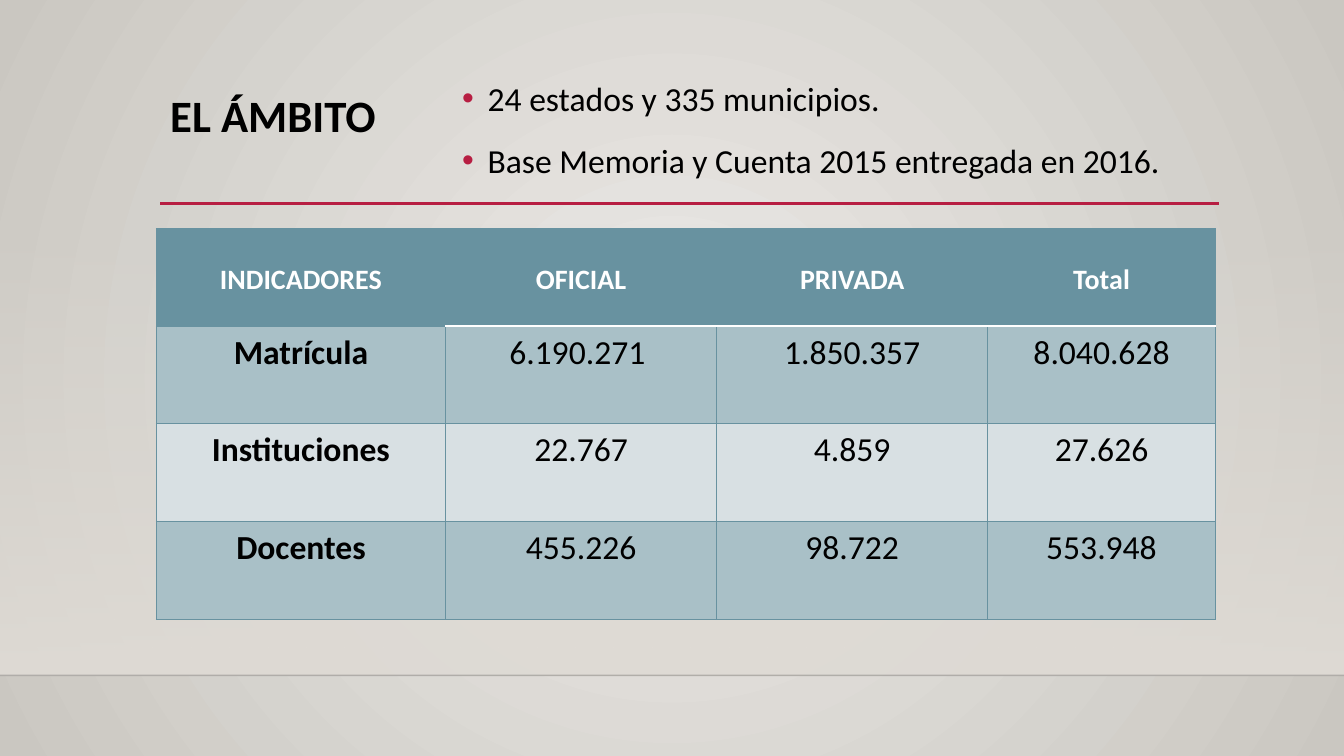
from pptx import Presentation
from pptx.dml.color import RGBColor as RGB
from pptx.enum.shapes import MSO_CONNECTOR, MSO_SHAPE
from pptx.enum.text import MSO_ANCHOR, PP_ALIGN
from pptx.oxml import parse_xml
from pptx.oxml.ns import nsdecls, qn
from pptx.util import Cm, Pt
from lxml import etree

COLORS = {
    "black": "000000", "white": "FFFFFF", "red": "B71E42", "teal": "6892A0",
    "band_dark": "A9C0C7", "band_light": "D8E0E3",
    "center": "ECEAE7", "edge": "CAC7C1", "wall": "DFDBD5", "floor_line": "000001",
}


def set_gradient(parent, stops, direction):
    gs = "".join(
        f'<a:gs pos="{pos}"><a:srgbClr val="{COLORS[name]}"><a:alpha val="{alpha}"/></a:srgbClr></a:gs>'
        for pos, name, alpha in stops)
    old = parent.find(".//" + qn("a:gradFill"))
    new = parse_xml(f'<a:gradFill {nsdecls("a")} rotWithShape="1"><a:gsLst>{gs}</a:gsLst>{direction}</a:gradFill>')
    old.getparent().replace(old, new)


def style_paragraph(p, size, color, bold, spacing):
    p.line_spacing = spacing
    for r in p.runs:
        r.font.name = "Calibri"
        r.font.size = Pt(size)
        r.font.bold = bold
        r.font.color.rgb = RGB.from_string(COLORS[color])


prs = Presentation()
prs.slide_width, prs.slide_height = Cm(33.87), Cm(19.05)
s = prs.slides.add_slide(prs.slide_layouts[6])

s.background.fill.gradient()
set_gradient(s._element, [(0, "center", 100000), (100000, "edge", 100000)],
             '<a:path path="circle"><a:fillToRect l="50000" t="50000" r="50000" b="50000"/></a:path>')

wall = s.shapes.add_shape(MSO_SHAPE.RECTANGLE, 0, Cm(5.61), prs.slide_width, Cm(11.41))
wall.shadow.inherit = False
wall.line.fill.background()
wall.fill.gradient()
set_gradient(wall._element, [(0, "wall", 0), (100000, "wall", 100000)], '<a:lin ang="5400000" scaled="0"/>')

for x1, x2, y, color, width, alpha in [
    (0, 33.87, 17.02, "floor_line", 1, 20000),
    (4.04, 30.73, 5.13, "red", 2.5, 100000),
]:
    line = s.shapes.add_connector(MSO_CONNECTOR.STRAIGHT, Cm(x1), Cm(y), Cm(x2), Cm(y))
    line.line.color.rgb = RGB.from_string(COLORS[color])
    line.line.width = Pt(width)
    etree.SubElement(line._element.find(".//" + qn("a:srgbClr")), qn("a:alpha"), val=str(alpha))
    etree.SubElement(line._element.spPr, qn("a:effectLst"))

title = s.shapes.add_textbox(Cm(4.04), Cm(2.24), Cm(26.67), Cm(2.92))
tf = title.text_frame
tf.word_wrap = True
tf.text = "EL ÁMBITO"
style_paragraph(tf.paragraphs[0], 32, "black", True, 0.9)

body = s.shapes.add_textbox(Cm(11.4), Cm(1.63), Cm(22.4), Cm(3.89))
tf = body.text_frame
tf.word_wrap = True
tf.text = "24 estados y 335 municipios.\nBase Memoria y Cuenta 2015 entregada en 2016."
for i, p in enumerate(tf.paragraphs):
    pPr = p._p.get_or_add_pPr()
    pPr.set("marL", str(Cm(0.64)))
    pPr.set("indent", str(-Cm(0.64)))
    bullet_color = etree.SubElement(pPr, qn("a:buClr"))
    etree.SubElement(bullet_color, qn("a:srgbClr"), val=COLORS["red"])
    etree.SubElement(pPr, qn("a:buFont"), typeface="Arial")
    etree.SubElement(pPr, qn("a:buChar"), char="•")
    style_paragraph(p, 24, "black", False, 1.2)
    p.space_before = Pt(10 if i else 0)

rows = [
    ["INDICADORES", "OFICIAL", "PRIVADA", "Total"],
    ["Matrícula", "6.190.271 ", "1.850.357", "8.040.628"],
    ["Instituciones", "22.767", "4.859", "27.626"],
    ["Docentes", "455.226", "98.722", "553.948"],
]
widths = [7.29, 6.83, 6.83, 5.74]
row_height = 2.46
table = s.shapes.add_table(len(rows), len(widths), Cm(3.94), Cm(5.76),
                           Cm(sum(widths)), Cm(row_height * len(rows))).table
for column, width in zip(table.columns, widths):
    column.width = Cm(width)

for i, row in enumerate(rows):
    table.rows[i].height = Cm(row_height)
    header = i == 0
    fill = "teal" if header else "band_dark" if i % 2 else "band_light"
    for j, text in enumerate(row):
        cell = table.cell(i, j)
        cell.margin_left = cell.margin_right = Cm(0.18)
        cell.margin_top = cell.margin_bottom = 0
        cell.vertical_anchor = MSO_ANCHOR.MIDDLE if header else MSO_ANCHOR.TOP
        cell.text = text
        p = cell.text_frame.paragraphs[0]
        p.alignment = PP_ALIGN.CENTER
        style_paragraph(p, 20 if header else 24, "white" if header else "black", header or j == 0, 1.15)
        borders = {side: ("teal", 0.75) for side in ("lnL", "lnR", "lnT", "lnB")}
        if j > 0 and i < 2:
            borders["lnB" if header else "lnT"] = ("white", 1.25)
        tcPr = cell._tc.get_or_add_tcPr()
        for side, (color, width) in borders.items():
            ln = etree.SubElement(tcPr, qn("a:" + side), w=str(Pt(width)))
            solid = etree.SubElement(ln, qn("a:solidFill"))
            etree.SubElement(solid, qn("a:srgbClr"), val=COLORS[color])
        cell.fill.solid()
        cell.fill.fore_color.rgb = RGB.from_string(COLORS[fill])

prs.save("out.pptx")
